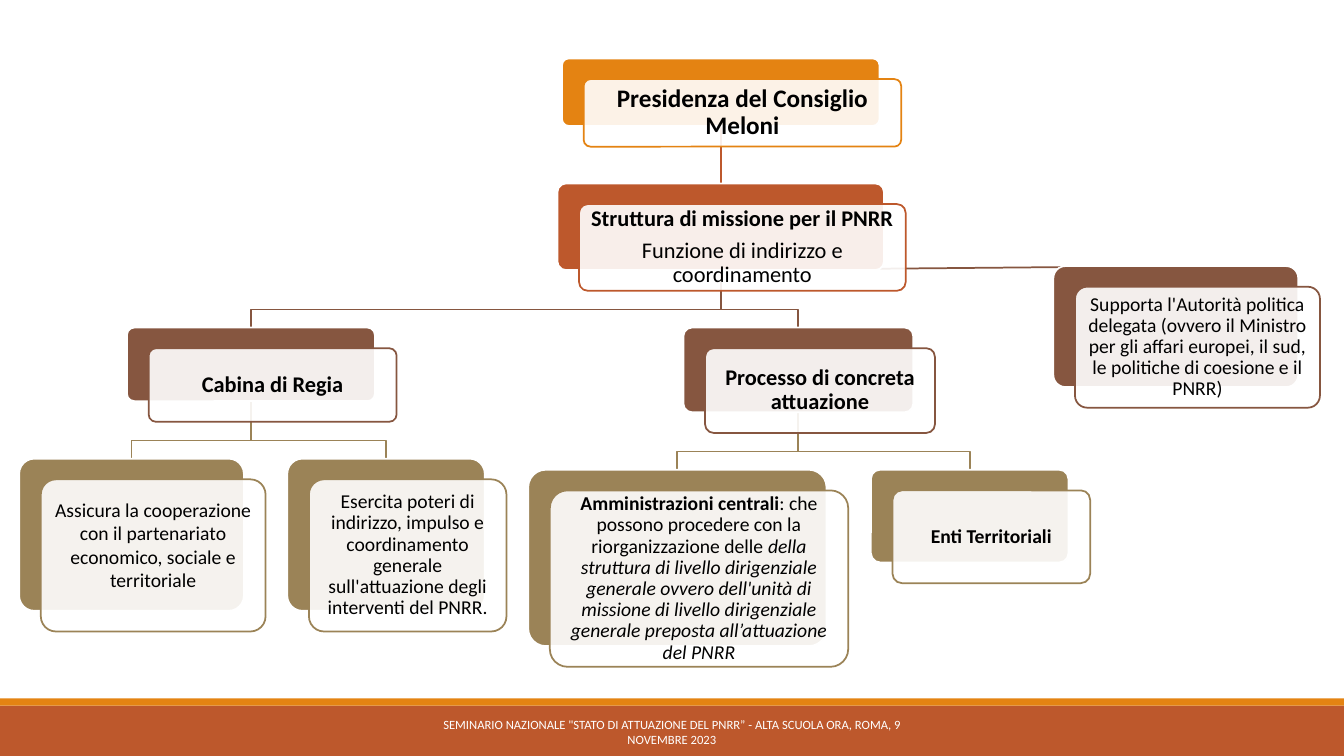
from dataclasses import dataclass
from typing import NamedTuple

from lxml.etree import SubElement
from pptx import Presentation
from pptx.dml.color import RGBColor
from pptx.enum.shapes import MSO_CONNECTOR as Connector, MSO_SHAPE as Preset
from pptx.enum.text import MSO_ANCHOR as Anchor, PP_ALIGN as Align
from pptx.oxml.ns import qn
from pptx.util import Inches, Pt

WHITE = RGBColor(0xFF, 0xFF, 0xFF)
BLACK = RGBColor(0x00, 0x00, 0x00)
ORANGE = RGBColor(0xE4, 0x83, 0x12)
RUST = RGBColor(0xBD, 0x58, 0x2C)
BROWN = RGBColor(0x86, 0x56, 0x40)
OLIVE = RGBColor(0x9B, 0x83, 0x57)

# The grid has square cells a tenth of an inch wide.
CELL = Inches(0.1)
COLUMNS, ROWS = 133.33, 75
LEVEL_GAP = 5.7
BEND = 3.9
FRONT_COLUMN, FRONT_ROW = 2.15, 2.05
LINE_WIDTH = Pt(1.25)
BOTTOM_SITE, TOP_SITE = 2, 0


class Run(NamedTuple):
    text: str
    bold: bool = False
    italic: bool = False


class Bar(NamedTuple):
    top: float
    height: float
    color: RGBColor


@dataclass
class Card:
    left: float
    width: float
    height: float
    color: RGBColor
    size: int
    paragraphs: list[list[Run]]
    children: tuple["Card", ...] = ()
    top: float | None = None
    margin: float = 0.6
    bottom_margin: float = 0.6
    line_spacing: float = 0.9
    space_share: float = 0.35

    @property
    def center(self) -> float:
        return self.left + self.width / 2

    @property
    def bottom(self) -> float:
        return self.top + self.height


CABINET = Card(12.6, 24.6, 7.3, BROWN, 16, [[Run("Cabina di Regia", bold=True)]], (
    Card(1.9, 22.3, 15.1, OLIVE, 14,
         [[Run("Assicura la cooperazione con il partenariato economico, sociale e territoriale")]],
         bottom_margin=2.7, line_spacing=1.0, space_share=0),
    Card(28.5, 19.6, 15.1, OLIVE, 14,
         [[Run("Esercita poteri di indirizzo, impulso e coordinamento generale "
               "sull'attuazione degli interventi del PNRR.")]]),
))
PROCESS = Card(67.8, 22.8, 8.4, BROWN, 16, [[Run("Processo di concreta attuazione", bold=True)]], (
    Card(52.4, 29.6, 17.5, OLIVE, 14,
         [[Run("Amministrazioni centrali", bold=True),
           Run(": che possono procedere con la riorganizzazione delle "),
           Run("della struttura di livello dirigenziale generale ovvero dell'unità di "
               "missione di livello dirigenziale generale preposta all’attuazione del PNRR",
               italic=True)]]),
    Card(86.4, 19.6, 9.2, OLIVE, 14, [[Run("Enti Territoriali", bold=True)]]),
))
SUPPORT = Card(104.5, 24.3, 12, BROWN, 14,
               [[Run("Supporta l'Autorità politica delegata (ovvero il Ministro per gli affari "
                     "europei, il sud, le politiche di coesione e il PNRR)")]], top=26.4)
MISSION = Card(55.3, 32.4, 8.6, RUST, 16,
               [[Run("Struttura di missione per il PNRR", bold=True)],
                [Run("Funzione di indirizzo e coordinamento")]],
               (CABINET, PROCESS, SUPPORT), margin=0.7)
PRESIDENCY = Card(55.75, 31.5, 6.7, ORANGE, 18,
                  [[Run("Presidenza del Consiglio Meloni", bold=True)]],
                  (MISSION,), top=5.8, margin=0.7)

BARS = (Bar(70, 5, RUST), Bar(69.3, 0.7, ORANGE))
FOOTER = [[Run("SEMINARIO NAZIONALE \"STATO DI ATTUAZIONE DEL PNRR” - "
               "ALTA SCUOLA ORA, ROMA, 9 NOVEMBRE 2023")]]


def cells(count: float) -> int:
    return round(count * CELL)


def set_all(target, values: dict) -> None:
    for name, value in values.items():
        setattr(target, name, value)


def add_panel(slide, preset, left: float, top: float, width: float, height: float,
              fill: RGBColor, outline: RGBColor | None = None):
    shape = slide.shapes.add_shape(preset, *map(cells, (left, top, width, height)))
    shape.shadow.inherit = False
    shape.fill.solid()
    shape.fill.fore_color.rgb = fill
    if outline is None:
        shape.line.fill.background()
    else:
        shape.adjustments[0] = 0.1
        shape.line.color.rgb = outline
        shape.line.width = LINE_WIDTH
    return shape


def write(shape, paragraphs: list[list[Run]], size: int, color: RGBColor, frame: dict,
          line_spacing: float = 1.0, space_share: float = 0) -> None:
    text_frame = shape.text_frame
    set_all(text_frame, {"word_wrap": True, "vertical_anchor": Anchor.MIDDLE} | frame)
    for index, runs in enumerate(paragraphs):
        paragraph = text_frame.add_paragraph() if index else text_frame.paragraphs[0]
        set_all(paragraph, {"alignment": Align.CENTER, "line_spacing": line_spacing,
                            "space_after": Pt(size * space_share)})
        for item in runs:
            run = paragraph.add_run()
            run.text = item.text
            set_all(run.font, {"name": "Calibri", "size": Pt(size),
                               "bold": item.bold, "italic": item.italic})
            run.font.color.rgb = color


def add_card(slide, card: Card):
    """Draw the coloured plate and the translucent text panel; return the plate."""
    plate = add_panel(slide, Preset.ROUNDED_RECTANGLE, card.left, card.top,
                      card.width, card.height, card.color, WHITE)
    panel = add_panel(slide, Preset.ROUNDED_RECTANGLE, card.left + FRONT_COLUMN,
                      card.top + FRONT_ROW, card.width, card.height, WHITE, card.color)
    fill_color = panel.element.spPr.find(qn("a:solidFill"))[0]
    SubElement(fill_color, qn("a:alpha")).set("val", "90000")
    margin = cells(card.margin)
    frame = {"margin_left": margin, "margin_right": margin, "margin_top": margin,
             "margin_bottom": cells(max(card.margin, card.bottom_margin))}
    write(panel, card.paragraphs, card.size, BLACK, frame, card.line_spacing, card.space_share)
    return plate


def add_link(slide, parent: Card, child: Card, parent_plate, child_plate) -> None:
    """Join two cards behind all panels, with a bend where the child is on the next level."""
    start = (cells(parent.center), cells(parent.bottom))
    end = (cells(child.center), cells(child.top))
    bend = cells(parent.bottom + BEND)
    if start[0] == end[0] or child.top < parent.bottom:
        link = slide.shapes.add_connector(Connector.STRAIGHT, *start, *end)
        link.begin_connect(parent_plate, BOTTOM_SITE)
        link.end_connect(child_plate, TOP_SITE)
    else:
        builder = slide.shapes.build_freeform(*start, scale=1.0)
        builder.add_line_segments([(start[0], bend), (end[0], bend), end], close=False)
        link = builder.convert_to_shape()
        link.fill.background()
    link.line.color.rgb = child.color
    link.line.width = LINE_WIDTH
    SubElement(link.element.spPr, qn("a:effectLst"))
    link.element.getparent().insert(2, link.element)


def add_branch(slide, card: Card):
    plate = add_card(slide, card)
    for child in card.children:
        if child.top is None:
            child.top = card.bottom + LEVEL_GAP
        add_link(slide, card, child, plate, add_branch(slide, child))
    return plate


def main() -> None:
    presentation = Presentation()
    set_all(presentation, {"slide_width": cells(COLUMNS), "slide_height": cells(ROWS)})
    slide = presentation.slides.add_slide(presentation.slide_layouts[6])
    for bar in BARS:
        add_panel(slide, Preset.RECTANGLE, 0, bar.top, COLUMNS, bar.height, bar.color)
    add_branch(slide, PRESIDENCY)
    footer = slide.shapes.add_textbox(*map(cells, (40.3, 70.6, 52.7, 4)))
    write(footer, FOOTER, 9, WHITE, {"margin_left": cells(1.2), "margin_right": cells(1.2)})
    presentation.save("out.pptx")


if __name__ == "__main__":
    main()
